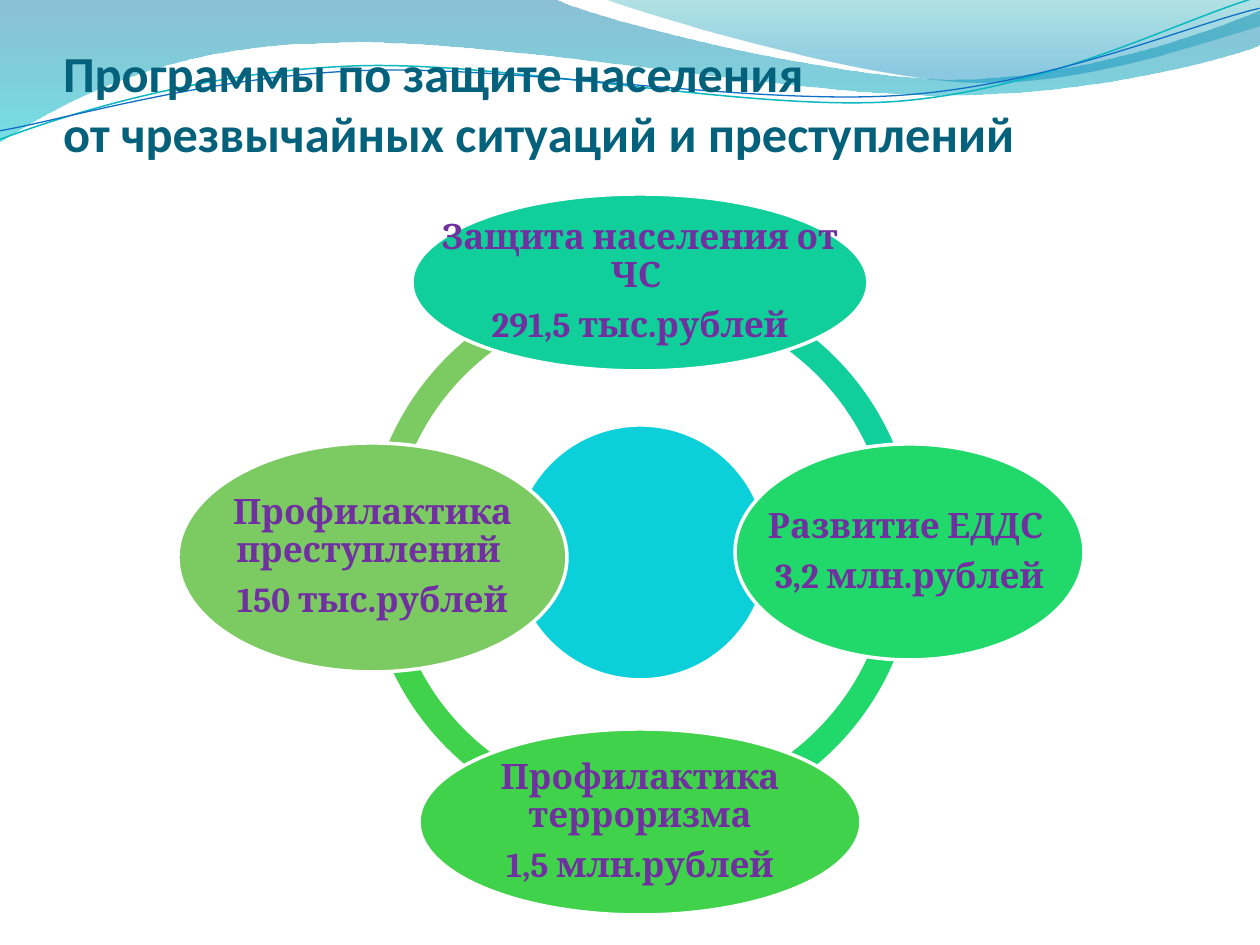
from dataclasses import dataclass
from lxml.etree import SubElement
from pptx import Presentation
from pptx.dml.color import RGBColor
from pptx.enum.shapes import MSO_SHAPE
from pptx.enum.text import MSO_ANCHOR, MSO_AUTO_SIZE, PP_ALIGN
from pptx.oxml.ns import qn
from pptx.util import Emu, Pt


@dataclass(frozen=True)
class Theme:
    title: str = "04617B"
    label: str = "7030A0"
    hub: str = "0BD0D9"
    top: str = "10CF9B"
    right: str = "21D86A"
    bottom: str = "41D24C"
    left: str = "7CCA62"
    outline: str = "FFFFFF"
    title_font: str = "Calibri"
    label_font: str = "Cambria"
    title_size: float = 28.8
    label_size: int = 20


theme = Theme()
PX = 914400 / 126


def px(*values):
    return [Emu(round(v * PX)) for v in values]


def add_wave(start, segments, close):
    builder = s.shapes.build_freeform(*start, scale=PX)
    for seg in segments:
        builder.add_line_segments(list(zip(seg[::2], seg[1::2])), close=False)
    sp = builder.convert_to_shape()
    sp.shadow.inherit = False
    path = next(sp._element.iter(qn("a:path")))
    steps = iter(path.findall(qn("a:lnTo")))
    for seg in segments:
        first = next(steps)
        if len(seg) == 6:
            first.tag = qn("a:cubicBezTo")
            for step in (next(steps), next(steps)):
                first.append(step[0])
                path.remove(step)
    if close:
        SubElement(path, qn("a:close"))
    waves.append(sp)
    return sp


prs = Presentation()
prs.slide_width, prs.slide_height = px(1260, 945)
s = prs.slides.add_slide(prs.slide_layouts[5])
waves = []

bands = [
    ((-1, 0), [(554, -1), (600, 21, 837, 79, 955, 79), (1075, 79, 1207, 33, 1260, 11), (1261, 45),
               (1239, 55, 1096, 96, 940, 95), (784, 95, 481, 35, 324, 43), (163, 45, 58, 105, -1, 142)],
     [(0, "0074A1", 45), (1, "00C6CF", 55)]),
    ((604, -1), [(641, 14, 859, 78, 969, 82), (1079, 87, 1211, 40, 1260, 26), (1260, 0)],
     [(0, "00A1A9", 30), (0.8, "008BBF", 45)]),
]
for start, segments, stops in bands:
    sp = add_wave(start, segments, True)
    sp.line.fill.background()
    sp.fill.gradient()
    sp.fill.gradient_angle = 270
    for stop, (pos, color, opacity) in zip(sp.fill.gradient_stops, stops):
        stop.position = pos
        stop.color.rgb = RGBColor.from_string(color)
    for clr, (pos, color, opacity) in zip(sp._element.spPr.iter(qn("a:srgbClr")), stops):
        SubElement(clr, qn("a:alpha")).set("val", str(opacity * 1000))

strands = [
    ((-3, 110), [(58, 90, 199, 52, 350, 53), (499, 53, 745, 118, 896, 114), (1049, 109, 1184, 45, 1260, 27)],
     "0AB8BF", 0.85),
    ((-2, 101), [(57, 94, 207, 57, 357, 58), (509, 58, 750, 112, 902, 108), (1052, 104, 1188, 52, 1262, 38)],
     "0F6FC6", 0.75),
]
for start, segments, color, width in strands:
    sp = add_wave(start, segments, False)
    sp.rotation = 357.3
    sp.fill.background()
    sp.line.color.rgb = RGBColor.from_string(color)
    sp.line.width = Pt(width)

for i, sp in enumerate(waves):
    sp._element.nvSpPr.cNvPr.set("id", str(101 + i))
    prs.slide_master.shapes._spTree.insert(2 + i, sp._element)

title = s.shapes.title
title.left, title.top, title.width, title.height = px(63, 38, 1134, 125)
tf = title.text_frame
tf.auto_size = MSO_AUTO_SIZE.NONE
tf.word_wrap = True
tf.vertical_anchor = MSO_ANCHOR.BOTTOM
tf.margin_left, tf.margin_top, tf.margin_right, tf.margin_bottom = px(0, 6, 0, 0)
p = tf.paragraphs[0]
p.alignment = PP_ALIGN.LEFT
for i, line in enumerate(["Программы по защите населения ", "от чрезвычайных ситуаций и преступлений"]):
    if i:
        p.add_line_break()
    r = p.add_run()
    r.text = line
    r.font.name = theme.title_font
    r.font.size = Pt(theme.title_size)
    r.font.bold = True
    r.font.color.rgb = RGBColor.from_string(theme.title)

arcs = [
    (366, 178.9, 269.5, theme.left),
    (366, 90.5, 178.9, theme.bottom),
    (363, 0, 90, theme.right),
    (363, 270, 0, theme.top),
]
for x, begin, end, color in arcs:
    sp = s.shapes.add_shape(MSO_SHAPE.BLOCK_ARC, *px(x, 276, 553, 553))
    sp.shadow.inherit = False
    sp.adjustments[0] = begin * 0.6
    sp.adjustments[1] = end * 0.6
    sp.adjustments[2] = 0.046
    sp.fill.solid()
    sp.fill.fore_color.rgb = RGBColor.from_string(color)
    sp.line.fill.background()

ovals = [
    ((513, 425, 255, 255), theme.hub, []),
    ((412, 194, 456, 177), theme.top, ["Защита населения от ЧС ", "291,5 тыс.рублей"]),
    ((735, 444, 349, 216), theme.right, ["Развитие ЕДДС ", "3,2 млн.рублей"]),
    ((419, 729, 442, 186), theme.bottom, ["Профилактика терроризма", "1,5 млн.рублей"]),
    ((178, 443, 389, 229), theme.left, ["Профилактика преступлений ", "150 тыс.рублей"]),
]
for box, color, lines in ovals:
    sp = s.shapes.add_shape(MSO_SHAPE.OVAL, *px(*box))
    sp.shadow.inherit = False
    sp.fill.solid()
    sp.fill.fore_color.rgb = RGBColor.from_string(color)
    sp.line.color.rgb = RGBColor.from_string(theme.outline)
    sp.line.width = Pt(2)
    if not lines:
        continue
    tf = s.shapes.add_textbox(*px(*box)).text_frame
    tf.word_wrap = True
    tf.vertical_anchor = MSO_ANCHOR.MIDDLE
    tf.margin_left, tf.margin_top, tf.margin_right, tf.margin_bottom = px(4, 4, 4, 4)
    for i, line in enumerate(lines):
        p = tf.add_paragraph() if i else tf.paragraphs[0]
        p.alignment = PP_ALIGN.CENTER
        p.line_spacing = 0.9
        p.space_after = Pt(7)
        r = p.add_run()
        r.text = line
        r.font.name = theme.label_font
        r.font.size = Pt(theme.label_size)
        r.font.bold = True
        r.font.color.rgb = RGBColor.from_string(theme.label)

prs.save("out.pptx")
